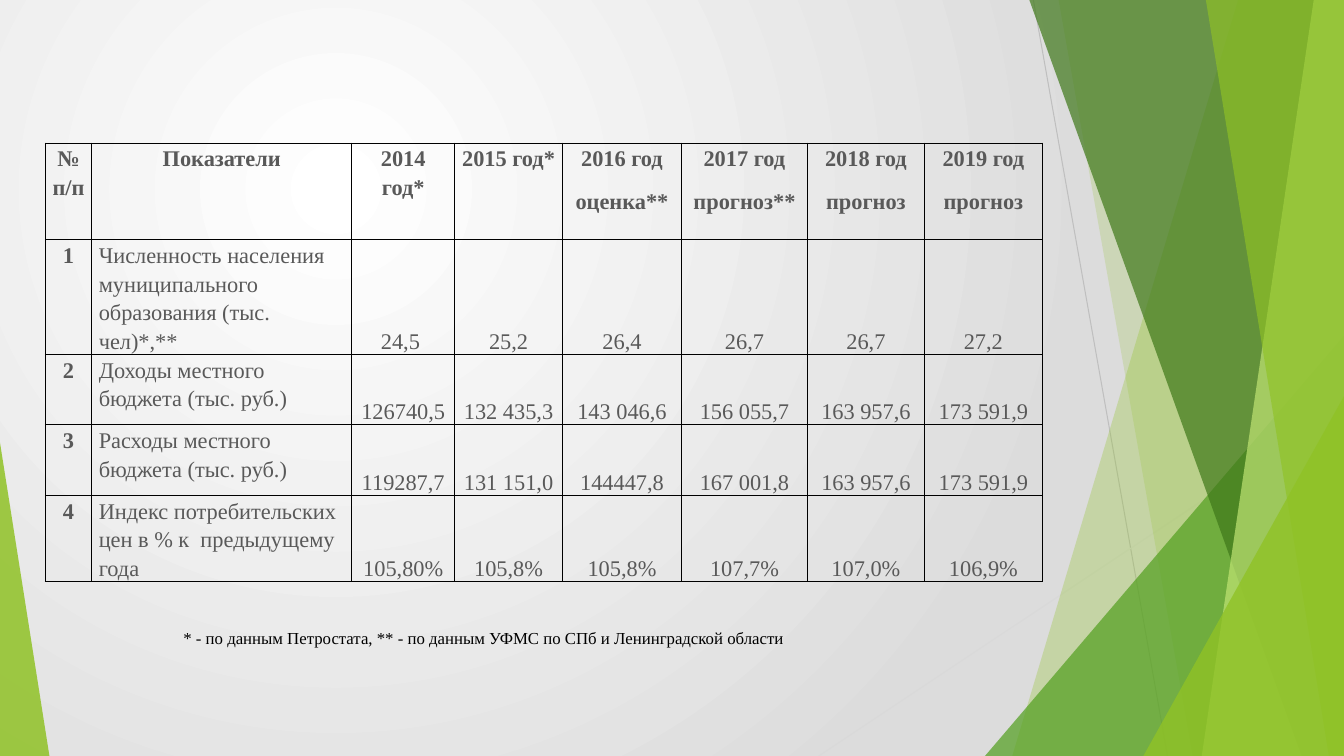
"""Build a slide with a table of municipal indicators on a faceted green background."""
from lxml.etree import SubElement
from pptx import Presentation
from pptx.dml.color import RGBColor
from pptx.enum.shapes import MSO_CONNECTOR as CONN, MSO_SHAPE as SHAPE
from pptx.enum.text import MSO_ANCHOR as ANCHOR, PP_ALIGN as ALIGN
from pptx.oxml import parse_xml
from pptx.oxml.ns import nsdecls, qn
from pptx.util import Inches, Pt

W, H = Inches(13.33), Inches(7.5)
FONT = "Times New Roman"
BLACK = RGBColor(0x00, 0x00, 0x00)
WHITE = RGBColor(0xFF, 0xFF, 0xFF)
MIST = RGBColor(0xDC, 0xDC, 0xDC)
SILVER = RGBColor(0xBF, 0xBF, 0xBF)
PALE = RGBColor(0xD9, 0xD9, 0xD9)
GRAY = RGBColor(0x59, 0x59, 0x59)
LIME = RGBColor(0x90, 0xC2, 0x26)
LIGHT_LIME = RGBColor(0xC0, 0xE4, 0x74)
GREEN = RGBColor(0x54, 0xA0, 0x21)
DARK_GREEN = RGBColor(0x3F, 0x78, 0x19)

COLUMNS = [3.45, 19.35, 7.65, 8.03, 8.85, 9.38, 8.7, 8.78]
ROWS = [12.8, 14.13, 9.33, 9.33, 9.33]
INDICATORS = [
    ["№ п/п", "Показатели", "2014 год*", "2015 год* ", "2016 год\nоценка**",
     "2017 год\nпрогноз**", "2018 год\nпрогноз", "2019 год\nпрогноз"],
    ["1", "Численность населения муниципального образования (тыс. чел)*,**",
     "24,5 ", "25,2", "26,4", "26,7", "26,7", "27,2"],
    ["2", "Доходы местного бюджета (тыс. руб.)", "126740,5", "132 435,3",
     "143 046,6", "156 055,7", "163 957,6", "173 591,9"],
    ["3", "Расходы местного бюджета (тыс. руб.)", "119287,7", "131 151,0",
     "144447,8", "167 001,8", "163 957,6", "173 591,9"],
    ["4", "Индекс потребительских цен в % к  предыдущему года", "105,80%",
     "105,8%", "105,8%", "107,7%", "107,0%", "106,9%"],
]
FOOTNOTE = "* - по данным Петростата, ** - по данным УФМС по СПб и Ленинградской области"


def across(percent):
    """Return a percentage of the slide width."""
    return round(W * percent / 100)


def down(percent):
    """Return a percentage of the slide height."""
    return round(H * percent / 100)


def paint_background(s):
    """Fill the background with a radial gradient centred at upper left."""
    fill = s.background.fill
    fill.gradient()
    for stop, color in zip(fill.gradient_stops, (WHITE, MIST)):
        stop.color.rgb = color
    lin = s.element.find(".//" + qn("a:lin"))
    lin.getparent().replace(lin, parse_xml(
        f'<a:path {nsdecls("a")} path="circle">'
        '<a:fillToRect l="50000" t="50000" r="100000" b="100000"/></a:path>'))


def add_line(s, x1, y1, x2, y2, color):
    """Draw a thin straight line."""
    line = s.shapes.add_connector(CONN.STRAIGHT, across(x1), down(y1), across(x2), down(y2))
    line.line.color.rgb = color
    line.line.width = Pt(0.75)
    SubElement(line.element.spPr, qn("a:effectLst"))


def tint(sp, color, opacity):
    """Give a shape a translucent fill without outline or shadow."""
    sp.fill.solid()
    sp.fill.fore_color.rgb = color
    sp.line.fill.background()
    sp.shadow.inherit = False
    clr = sp.element.spPr.find(".//" + qn("a:srgbClr"))
    SubElement(clr, qn("a:alpha"), val=str(opacity * 1000))


def add_facet(s, top, bottom, color, opacity):
    """Draw a full-height facet between a slanted left edge and the right margin."""
    builder = s.shapes.build_freeform(across(top), 0)
    builder.add_line_segments([(W, 0), (W, H), (across(bottom), H)], close=True)
    tint(builder.convert_to_shape(), color, opacity)


def add_corner(s, left, right, top, apex, color, opacity):
    """Draw a right triangle standing on the bottom edge."""
    sp = s.shapes.add_shape(SHAPE.ISOSCELES_TRIANGLE, across(left), down(top),
                            across(right - left), down(100 - top))
    sp.adjustments[0] = apex
    tint(sp, color, opacity)


def add_run(p, text, size, color, bold=False):
    """Add one formatted run."""
    r = p.add_run()
    r.text = text
    r.font.name = FONT
    r.font.size = Pt(size)
    r.font.bold = bold
    r.font.color.rgb = color


def add_borders(cell):
    """Draw thin black borders around a table cell."""
    for i, side in enumerate(("lnL", "lnR", "lnT", "lnB")):
        cell._tc.get_or_add_tcPr().insert(i, parse_xml(
            f'<a:{side} {nsdecls("a")} w="{Pt(1)}"><a:solidFill>'
            f'<a:srgbClr val="{BLACK}"/></a:solidFill></a:{side}>'))


def fill_cell(cell, text, bold, align, anchor):
    """Write and format one table cell."""
    cell.fill.background()
    add_borders(cell)
    cell.margin_left = cell.margin_right = Inches(0.07)
    cell.margin_top = cell.margin_bottom = 0
    cell.vertical_anchor = anchor
    tf = cell.text_frame
    for i, line in enumerate(text.split("\n")):
        p = tf.add_paragraph() if i else tf.paragraphs[0]
        p.alignment = align
        p.line_spacing = 1.15
        p.space_after = Pt(10)
        add_run(p, line, 16, GRAY, bold)


def add_indicators(s):
    """Add the table of indicators."""
    table = s.shapes.add_table(len(ROWS), len(COLUMNS), across(3.38), down(18.93),
                               across(sum(COLUMNS)), down(sum(ROWS))).table
    for column, width in zip(table.columns, COLUMNS):
        column.width = across(width)
    for row, height in zip(table.rows, ROWS):
        row.height = down(height)
    for i, texts in enumerate(INDICATORS):
        for j, text in enumerate(texts):
            align = ALIGN.LEFT if i and j == 1 else ALIGN.CENTER
            anchor = ANCHOR.BOTTOM if i and j > 1 else ANCHOR.TOP
            fill_cell(table.cell(i, j), text, i == 0 or j == 0, align, anchor)


def add_footnote(s):
    """Add the indented source note below the table."""
    box = s.shapes.add_textbox(across(9.23), down(82.4), across(66.24), down(4))
    tf = box.text_frame
    tf.word_wrap = True
    tf.vertical_anchor = ANCHOR.MIDDLE
    p = tf.paragraphs[0]
    p._p.get_or_add_pPr().set("indent", str(Inches(0.49)))
    add_run(p, FOOTNOTE, 12, BLACK)


def main():
    """Build and save the slide."""
    prs = Presentation()
    prs.slide_width, prs.slide_height = W, H
    s = prs.slides.add_slide(prs.slide_layouts[6])
    paint_background(s)
    add_line(s, 76.89, 0, 86.87, 100, SILVER)
    add_line(s, 100, 53.73, 60.92, 100, PALE)
    add_facet(s, 92.12, 75.32, LIME, 30)
    add_facet(s, 78.77, 88.75, LIME, 20)
    add_corner(s, 73.29, 100, 44.4, 1, GREEN, 72)
    add_facet(s, 76.59, 96.85, DARK_GREEN, 70)
    add_facet(s, 97.75, 89.42, LIGHT_LIME, 70)
    add_facet(s, 89.72, 98.87, LIME, 65)
    add_corner(s, 85.07, 100, 52.4, 1, LIME, 80)
    add_corner(s, 0, 3.68, 58.53, 0, LIME, 85)
    add_indicators(s)
    add_footnote(s)
    prs.save("out.pptx")


if __name__ == "__main__":
    main()
